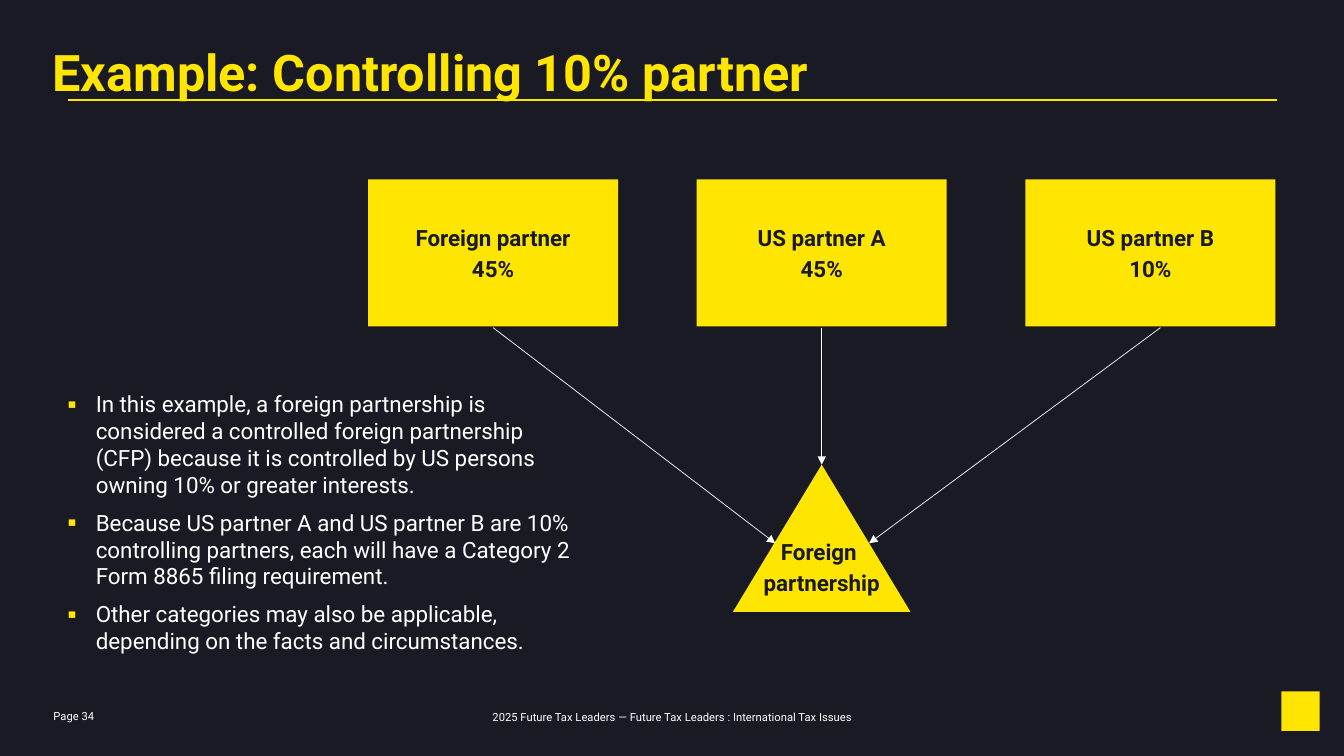
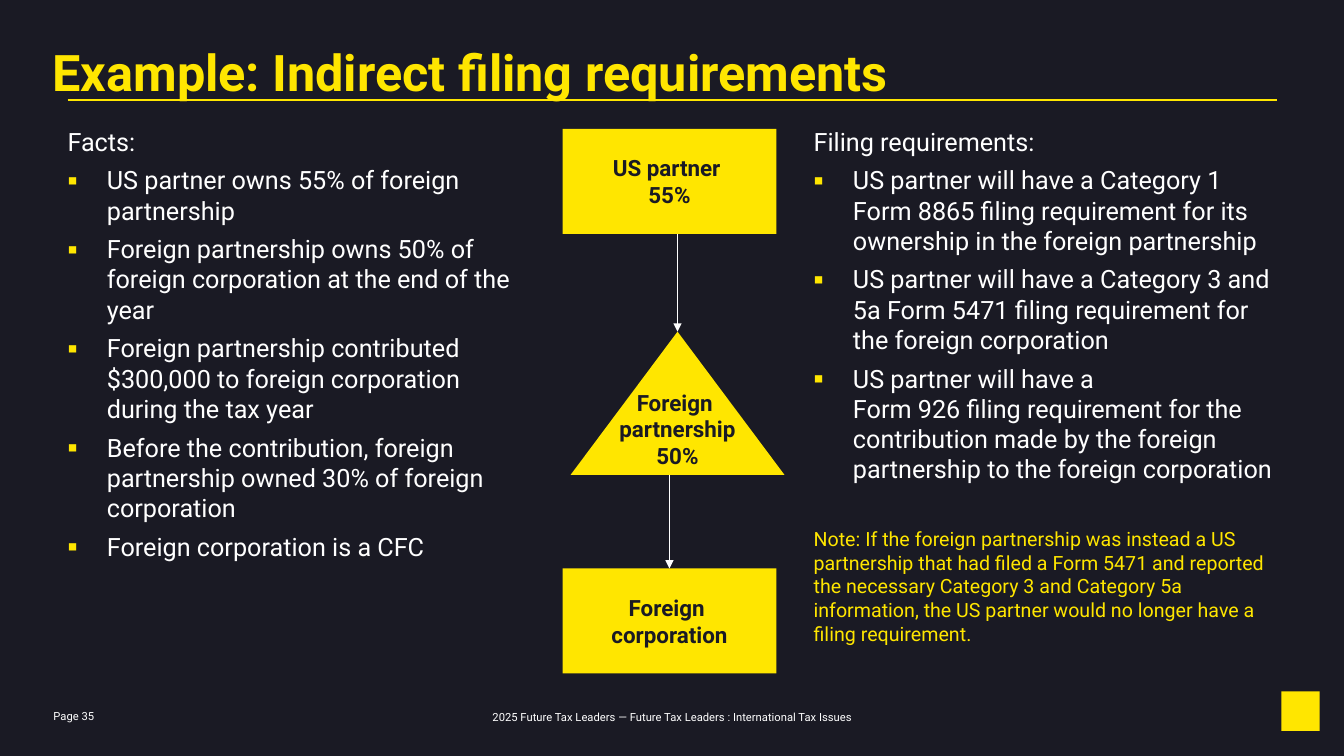
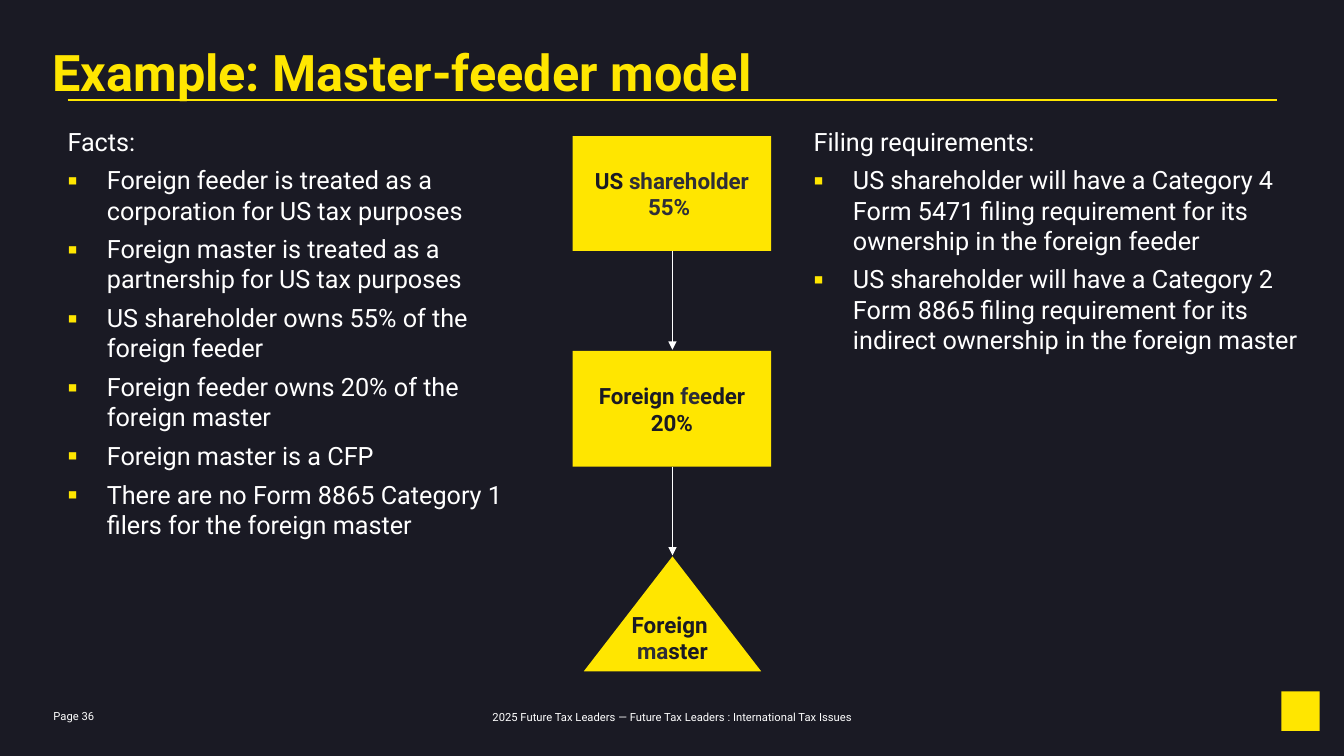
"""Build three slides of partnership filing examples."""
from dataclasses import dataclass

import lxml.etree
import pptx
import pptx.dml.color
import pptx.enum.shapes
import pptx.enum.text
import pptx.oxml.ns
import pptx.util

Inches = pptx.util.Inches
Pt = pptx.util.Pt
qn = pptx.oxml.ns.qn
RGB = pptx.dml.color.RGBColor.from_string
Align = pptx.enum.text.PP_ALIGN
Anchor = pptx.enum.text.MSO_ANCHOR
Shape = pptx.enum.shapes.MSO_SHAPE


@dataclass(frozen=True)
class Theme:
    font: str = "Roboto"
    ground: str = "1A1A24"
    accent: str = "FFE600"
    light: str = "FFFFFF"
    dim: str = "2E2E38"
    title: float = 36
    column: float = 18
    label: float = 16
    note: float = 14
    footer: float = 8


THEME = Theme()


@dataclass(frozen=True)
class Box:
    left: float
    top: float
    width: float
    height: float


@dataclass(frozen=True)
class Entity:
    """A labelled party; text after every odd bar in a line is dimmed."""
    box: Box
    lines: tuple[str, ...]
    gap: float = 0
    triangle: bool = False
    margins: tuple[float, float, float, float] = (0.05, 0.05, 0.05, 0.05)


@dataclass(frozen=True)
class Arrow:
    x1: float
    y1: float
    x2: float
    y2: float


@dataclass(frozen=True)
class Column:
    box: Box
    bullets: tuple[str, ...]
    heading: str = ""
    note: str = ""
    size: float = THEME.column
    indent: float = 0.39
    before: float = 0
    after: float = 6


@dataclass(frozen=True)
class Example:
    title: str
    page: int
    columns: tuple[Column, ...]
    entities: tuple[Entity, ...]
    arrows: tuple[Arrow, ...]


def place(box: Box) -> tuple[int, int, int, int]:
    return Inches(box.left), Inches(box.top), Inches(box.width), Inches(box.height)


def set_margins(frame, left: float, top: float, right: float, bottom: float) -> None:
    frame.margin_left, frame.margin_top = Inches(left), Inches(top)
    frame.margin_right, frame.margin_bottom = Inches(right), Inches(bottom)


def style(paragraph, size: float, color: str, bold: bool = False) -> None:
    font = paragraph.font
    font.name, font.size, font.bold = THEME.font, Pt(size), bold
    font.color.rgb = RGB(color)


def add_frame(slide, box: Box):
    frame = slide.shapes.add_textbox(*place(box)).text_frame
    frame.word_wrap = True
    set_margins(frame, 0, 0, 0, 0)
    return frame


def add_line_of_text(slide, box: Box, text: str, size: float, color: str,
                     bold: bool = False, align=Align.LEFT, anchor=Anchor.TOP) -> None:
    frame = add_frame(slide, box)
    frame.vertical_anchor = anchor
    paragraph = frame.paragraphs[0]
    paragraph.text, paragraph.alignment = text, align
    style(paragraph, size, color, bold)


def add_bullet(paragraph, indent: float) -> None:
    properties = paragraph._p.get_or_add_pPr()
    properties.set("marL", str(Inches(indent)))
    properties.set("indent", str(-Inches(indent)))
    tint = lxml.etree.SubElement(properties, qn("a:buClr"))
    lxml.etree.SubElement(tint, qn("a:srgbClr"), val=THEME.accent)
    lxml.etree.SubElement(properties, qn("a:buFont"), typeface=THEME.font)
    lxml.etree.SubElement(properties, qn("a:buChar"), char="▪")


def add_column(slide, column: Column) -> None:
    frame = add_frame(slide, column.box)
    plain = [(column.heading, False)] if column.heading else []
    for index, (text, bulleted) in enumerate(plain + [(b, True) for b in column.bullets]):
        paragraph = frame.add_paragraph() if index else frame.paragraphs[0]
        paragraph.text = text
        if bulleted:
            add_bullet(paragraph, column.indent)
        paragraph.space_before, paragraph.space_after = Pt(column.before), Pt(column.after)
        style(paragraph, column.size, THEME.light)
    if column.note:
        note = frame.add_paragraph()
        note.text, note.space_before = column.note, Pt(25)
        style(note, THEME.note, THEME.accent)


def fill_plain(shape, color: str) -> None:
    shape.shadow.inherit = False
    shape.fill.solid()
    shape.fill.fore_color.rgb = RGB(color)
    shape.line.fill.background()


def add_entity(slide, entity: Entity) -> None:
    kind = Shape.FLOWCHART_EXTRACT if entity.triangle else Shape.RECTANGLE
    party = slide.shapes.add_shape(kind, *place(entity.box))
    fill_plain(party, THEME.accent)
    frame = party.text_frame
    frame.word_wrap = not entity.triangle
    frame.vertical_anchor = Anchor.MIDDLE
    set_margins(frame, *entity.margins)
    for index, line in enumerate(entity.lines):
        paragraph = frame.add_paragraph() if index else frame.paragraphs[0]
        paragraph.alignment, paragraph.space_before = Align.CENTER, Pt(entity.gap)
        style(paragraph, THEME.label, THEME.ground, True)
        for position, part in enumerate(line.split("|")):
            if part:
                run = paragraph.add_run()
                run.text = part
                run.font.color.rgb = RGB(THEME.dim if position % 2 else THEME.ground)


def add_rule(slide, course: Arrow, color: str, width: float, pointed: bool = False) -> None:
    rule = slide.shapes.add_connector(
        pptx.enum.shapes.MSO_CONNECTOR.STRAIGHT, Inches(course.x1), Inches(course.y1),
        Inches(course.x2), Inches(course.y2))
    rule.line.color.rgb = RGB(color)
    rule.line.width = Pt(width)
    properties = rule.element.spPr
    if pointed:
        lxml.etree.SubElement(properties.find(qn("a:ln")), qn("a:tailEnd"), type="triangle")
    lxml.etree.SubElement(properties, qn("a:effectLst"))


def add_shared_parts(slide, title: str, page: int) -> None:
    slide.background.fill.solid()
    slide.background.fill.fore_color.rgb = RGB(THEME.ground)
    emblem = slide.shapes.add_shape(Shape.RECTANGLE, *place(Box(12.71, 6.86, 0.38, 0.39)))
    fill_plain(emblem, THEME.accent)
    add_line_of_text(slide, Box(4.82, 7.04, 3.7, 0.14),
                     "2025 Future Tax Leaders — Future Tax Leaders : International Tax Issues",
                     THEME.footer, THEME.light, align=Align.CENTER, anchor=Anchor.MIDDLE)
    add_line_of_text(slide, Box(0.53, 7.04, 0.56, 0.13), f"Page {page}",
                     THEME.footer, THEME.light)
    add_rule(slide, Arrow(0.67, 0.99, 12.67, 0.99), THEME.accent, 1.5)
    add_line_of_text(slide, Box(0.52, 0.41, 12, 0.65), title, THEME.title, THEME.accent, True)


def add_example(deck, example: Example) -> None:
    slide = deck.slides.add_slide(deck.slide_layouts[6])
    add_shared_parts(slide, example.title, example.page)
    for column in example.columns:
        add_column(slide, column)
    for entity in example.entities:
        add_entity(slide, entity)
    for arrow in example.arrows:
        add_rule(slide, arrow, THEME.light, 0.5, pointed=True)


PARTNERS = (("Foreign partner", "45%"), ("US partner A", "45%"), ("US partner B", "10%"))

EXAMPLES = (
    Example(
        "Example: Controlling 10% partner", 34,
        (Column(Box(0.67, 3.87, 5.02, 2.95), (
            "In this example, a foreign partnership is considered a controlled foreign "
            "partnership (CFP) because it is controlled by US persons owning 10% or "
            "greater interests.",
            "Because US partner A and US partner B are 10% controlling partners, each will "
            "have a Category 2 Form 8865 filing requirement.",
            "Other categories may also be applicable, depending on the facts and "
            "circumstances.",
        ), size=THEME.label, indent=0.28, before=4, after=4),),
        tuple(Entity(Box(3.65 + 3.26 * i, 1.78, 2.48, 1.46), partner, gap=3)
              for i, partner in enumerate(PARTNERS))
        + (Entity(Box(7.27, 4.61, 1.76, 1.46), ("Foreign ", "partnership"), gap=3,
                  triangle=True, margins=(0.1, 0.05, 0.1, 0.2)),),
        (Arrow(4.89, 3.25, 7.69, 5.39), Arrow(11.51, 3.25, 8.62, 5.39),
         Arrow(8.15, 3.25, 8.15, 4.61)),
    ),
    Example(
        "Example: Indirect filing requirements", 35,
        (Column(Box(0.67, 1.25, 4.43, 5.28), (
            "US partner owns 55% of foreign partnership",
            "Foreign partnership owns 50% of foreign corporation at the end of the year",
            "Foreign partnership contributed $300,000 to foreign corporation during the "
            "tax year",
            "Before the contribution, foreign partnership owned 30% of foreign corporation",
            "Foreign corporation is a CFC",
        ), "Facts:"),
         Column(Box(8.07, 1.25, 4.6, 5.79), (
             "US partner will have a Category 1 Form 8865 filing requirement for its "
             "ownership in the foreign partnership",
             "US partner will have a Category 3 and 5a Form 5471 filing requirement for "
             "the foreign corporation",
             "US partner will have a \vForm 926 filing requirement for the contribution "
             "made by the foreign partnership to the foreign corporation",
         ), "Filing requirements:",
             "Note: If the foreign partnership was instead a US partnership that had filed "
             "a Form 5471 and reported the necessary Category 3 and Category 5a "
             "information, the US partner would no longer have a filing requirement.")),
        (Entity(Box(5.58, 1.28, 2.12, 1.04), ("US partner ", "55%")),
         Entity(Box(5.66, 3.29, 2.12, 1.42), ("Foreign ", "partnership", "50%"),
                triangle=True, margins=(0.1, 0, 0.1, 0.2)),
         Entity(Box(5.58, 5.64, 2.12, 1.04), ("Foreign ", "corporation"))),
        (Arrow(6.72, 2.32, 6.72, 3.29), Arrow(6.64, 4.71, 6.64, 5.64)),
    ),
    Example(
        "Example: Master-feeder model", 36,
        (Column(Box(0.67, 1.25, 4.6, 5.28), (
            "Foreign feeder is treated as a corporation for US tax purposes",
            "Foreign master is treated as a partnership for US tax purposes",
            "US shareholder owns 55% of the foreign feeder",
            "Foreign feeder owns 20% of the foreign master",
            "Foreign master is a CFP",
            "There are no Form 8865 Category 1 filers for the foreign master",
        ), "Facts:"),
         Column(Box(8.07, 1.25, 4.86, 5.28), (
             "US shareholder will have a Category 4 Form 5471 filing requirement for its "
             "ownership in the foreign feeder",
             "US shareholder will have a Category 2 Form 8865 filing requirement for its "
             "indirect ownership in the foreign master",
         ), "Filing requirements:")),
        (Entity(Box(5.68, 1.35, 1.97, 1.14), ("US |shareholder", "|55% ")),
         Entity(Box(5.68, 3.48, 1.97, 1.15), ("Foreign |fe|eder", "20%")),
         Entity(Box(5.79, 5.52, 1.76, 1.14), ("Foreign ", "|ma|ster"),
                triangle=True, margins=(0.1, 0, 0.1, 0.1))),
        (Arrow(6.67, 2.49, 6.67, 3.47), Arrow(6.67, 4.63, 6.67, 5.51)),
    ),
)


def main() -> None:
    deck = pptx.Presentation()
    deck.slide_width, deck.slide_height = Inches(13.33), Inches(7.5)
    for example in EXAMPLES:
        add_example(deck, example)
    deck.save("out.pptx")


if __name__ == "__main__":
    main()
